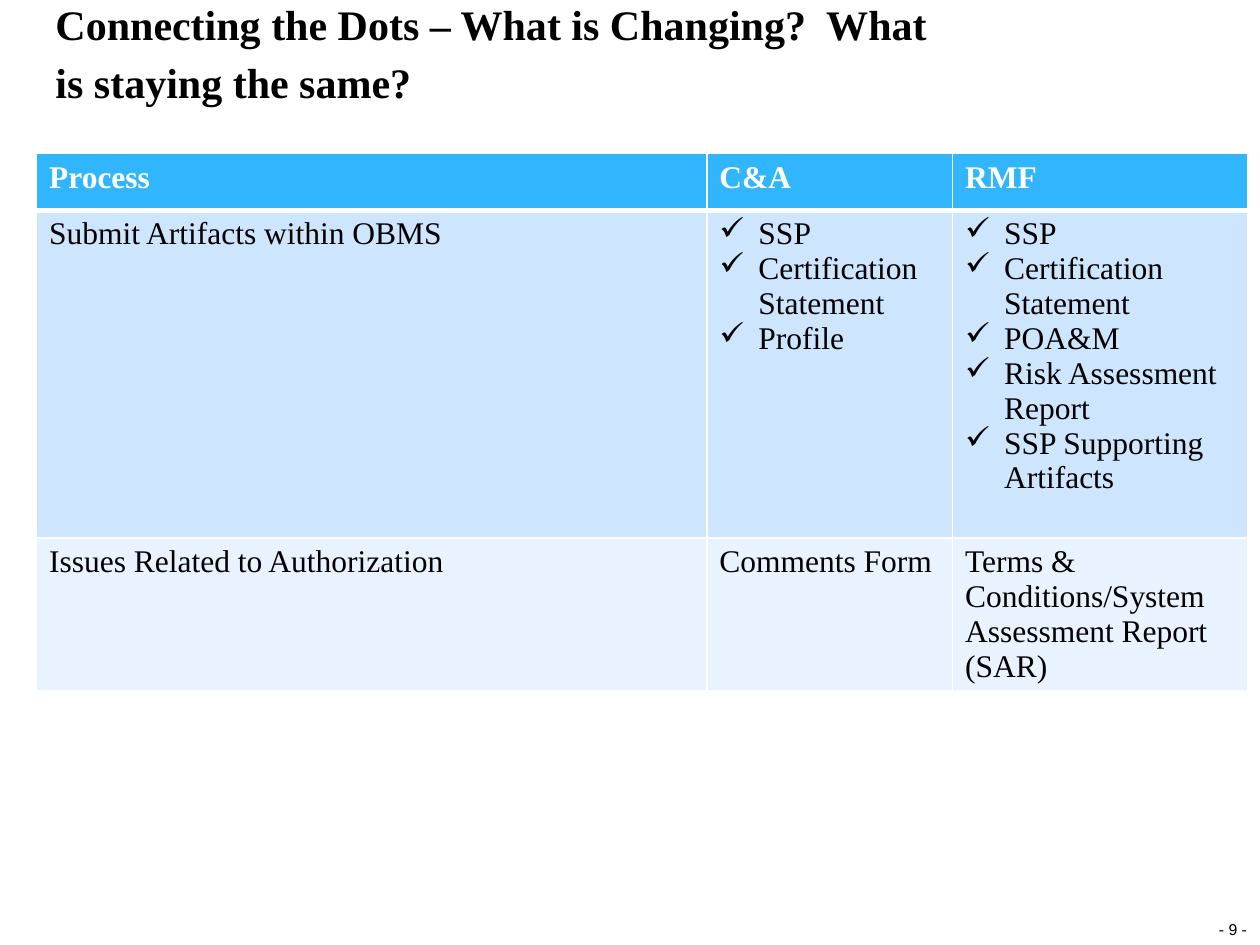
"""Builds the slide that compares the C&A and RMF processes."""
from dataclasses import dataclass

import pptx
import pptx.dml.color
import pptx.enum.text
import pptx.oxml
import pptx.oxml.ns
import pptx.util
from pptx.util import Inches


@dataclass(frozen=True)
class Theme:
    """Colours, fonts and type sizes of the slide."""
    ink: str = "000000"
    white: str = "FFFFFF"
    header: str = "31B6FD"
    bands: tuple = ("CEE5FE", "E8F3FF")
    serif: str = "Times New Roman"
    sans: str = "Arial"
    title_size: int = 24
    table_size: int = 18
    page_size: int = 9


THEME = Theme()
TITLE = "Connecting the Dots – What is Changing?  What is staying the same?"
COLUMN_WIDTHS = (5.32, 1.95, 2.34)
ROW_HEIGHTS = (0.45, 2.6, 1.21)
ROWS = (
    ("Process", "C&A", "RMF"),
    (
        "Submit Artifacts within OBMS",
        ["SSP", "Certification Statement", "Profile"],
        ["SSP", "Certification Statement", "POA&M",
         "Risk Assessment Report", "SSP Supporting Artifacts"],
    ),
    (
        "Issues Related to Authorization",
        "Comments Form",
        "Terms & Conditions/System Assessment Report (SAR)",
    ),
)


def rgb(value):
    """Return a colour from its hex value."""
    return pptx.dml.color.RGBColor.from_string(value)


def style_runs(paragraph, face, size, color, bold=False):
    """Format every run of a paragraph."""
    for run in paragraph.runs:
        run.font.name = face
        run.font.size = pptx.util.Pt(size)
        run.font.color.rgb = rgb(color)
        run.font.bold = bold


def fit_frame(frame, wrap):
    """Remove the margins of a text frame and anchor it at the bottom."""
    frame.margin_left = frame.margin_right = 0
    frame.margin_top = frame.margin_bottom = 0
    frame.word_wrap = wrap
    frame.auto_size = pptx.enum.text.MSO_AUTO_SIZE.NONE
    frame.vertical_anchor = pptx.enum.text.MSO_ANCHOR.BOTTOM


def add_check(paragraph):
    """Give a paragraph a check mark and a hanging indent."""
    properties = paragraph._p.get_or_add_pPr()
    properties.set("marL", str(Inches(0.31)))
    properties.set("indent", str(-Inches(0.31)))
    bullet = pptx.oxml.parse_xml(
        f'<a:buChar {pptx.oxml.ns.nsdecls("a")} char="✓"/>')
    properties.append(bullet)


def set_borders(cell, top, bottom):
    """Draw white cell borders with the given top and bottom widths."""
    properties = cell._tc.get_or_add_tcPr()
    widths = {"lnL": 1, "lnR": 1, "lnT": top, "lnB": bottom}
    for position, (side, width) in enumerate(widths.items()):
        properties.insert(position, pptx.oxml.parse_xml(
            f'<a:{side} {pptx.oxml.ns.nsdecls("a")} w="{pptx.util.Pt(width)}">'
            f'<a:solidFill><a:srgbClr val="{THEME.white}"/></a:solidFill>'
            f'</a:{side}>'))


def fill_cell(cell, content, row_index):
    """Write one cell as plain text or as a checked list."""
    is_header = row_index == 0
    is_list = isinstance(content, list)
    cell.text_frame.text = "\n".join(content) if is_list else content
    for paragraph in cell.text_frame.paragraphs:
        if is_list:
            add_check(paragraph)
        style_runs(paragraph, THEME.serif, THEME.table_size,
                   THEME.white if is_header else THEME.ink, is_header)
    cell.fill.solid()
    cell.fill.fore_color.rgb = rgb(
        THEME.header if is_header else THEME.bands[row_index - 1])
    set_borders(cell, top=3 if row_index == 1 else 1,
                bottom=3 if is_header else 1)


def add_title(slide):
    """Place and format the slide title."""
    title = slide.shapes.title
    title.left, title.top = Inches(0.44), Inches(-0.01)
    title.width, title.height = Inches(7.04), Inches(0.86)
    frame = title.text_frame
    frame.text = TITLE
    fit_frame(frame, wrap=True)
    heading = frame.paragraphs[0]
    heading.alignment = pptx.enum.text.PP_ALIGN.LEFT
    heading.line_spacing = 1.16
    style_runs(heading, THEME.serif, THEME.title_size, THEME.ink, bold=True)


def add_process_table(slide):
    """Add the table of process changes."""
    table = slide.shapes.add_table(
        len(ROWS), len(COLUMN_WIDTHS), Inches(0.29), Inches(1.22),
        Inches(sum(COLUMN_WIDTHS)), Inches(sum(ROW_HEIGHTS))).table
    for column, width in zip(table.columns, COLUMN_WIDTHS):
        column.width = Inches(width)
    for row_index, (row, height) in enumerate(zip(table.rows, ROW_HEIGHTS)):
        row.height = Inches(height)
        for cell, content in zip(row.cells, ROWS[row_index]):
            fill_cell(cell, content, row_index)


def add_page_number(slide):
    """Add the page number in the lower right corner."""
    frame = slide.shapes.add_textbox(
        Inches(9.63), Inches(7.29), Inches(0.31), Inches(0.16)).text_frame
    frame.text = "- 9 -"
    fit_frame(frame, wrap=False)
    page_number = frame.paragraphs[0]
    page_number.alignment = pptx.enum.text.PP_ALIGN.CENTER
    page_number.line_spacing = 1.06
    style_runs(page_number, THEME.sans, THEME.page_size, THEME.ink)


def main():
    """Build and save the slide."""
    deck = pptx.Presentation()
    deck.slide_width, deck.slide_height = Inches(10), Inches(7.5)
    slide = deck.slides.add_slide(deck.slide_layouts[5])
    add_title(slide)
    add_process_table(slide)
    add_page_number(slide)
    deck.save("out.pptx")


if __name__ == "__main__":
    main()
